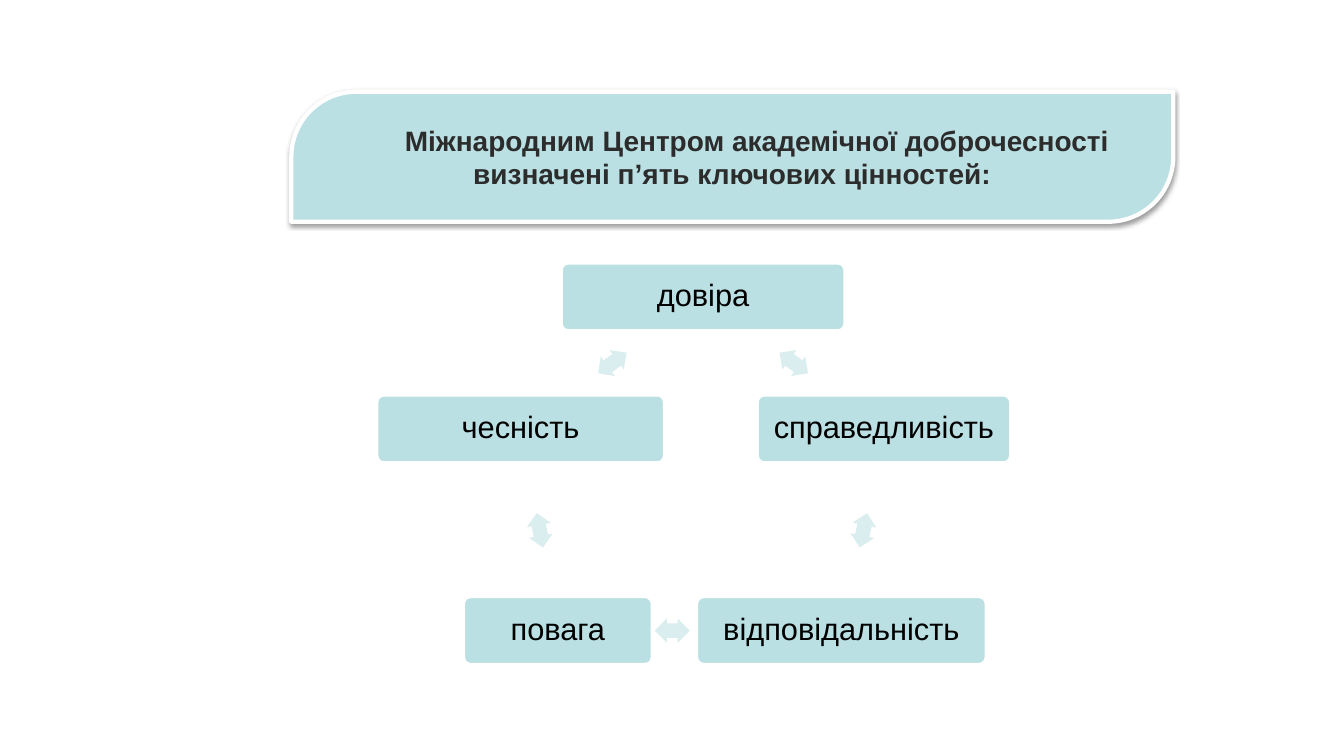
from lxml.etree import SubElement
from pptx import Presentation
from pptx.dml.color import RGBColor
from pptx.enum.shapes import MSO_SHAPE
from pptx.enum.text import MSO_ANCHOR, PP_ALIGN
from pptx.oxml.ns import qn
from pptx.util import Pt

TEAL = RGBColor(0xBB, 0xE0, 0xE3)
PALE_TEAL = RGBColor(0xDA, 0xED, 0xEF)
WHITE = RGBColor(0xFF, 0xFF, 0xFF)
BLACK = RGBColor(0, 0, 0)
CHARCOAL = RGBColor(0x2C, 0x2C, 0x2C)

VALUES = [
    ("довіра", 502.2, 0, 202.3),
    ("справедливість", 631.4, 94.3, 180.7),
    ("відповідальність", 601, 238.3, 206.6),
    ("повага", 398.5, 238.3, 134.6),
    ("чесність", 371.9, 94.3, 205.2),
]
ARROWS = [
    (567, 71.3, 36),
    (616.7, 190.8, 102.1),
    (480.2, 262.4, 180),
    (385.6, 190.8, 259.5),
    (437.4, 71.3, 324),
]


def add_filled(slide, preset, box, fill, adjustments, outline=0):
    """Add a preset shape with a flat fill and an optional white outline."""
    shape = slide.shapes.add_shape(preset, *(Pt(length) for length in box))
    shape.shadow.inherit = False
    for index, value in enumerate(adjustments):
        shape.adjustments[index] = value
    shape.fill.solid()
    shape.fill.fore_color.rgb = fill
    if outline:
        shape.line.color.rgb = WHITE
        shape.line.width = Pt(outline)
    else:
        shape.line.fill.background()
    return shape


def write_text(shape, text, size, color, bold=False, inset=None, spacing=None, indent=0):
    """Write one centred paragraph into a shape."""
    frame = shape.text_frame
    frame.word_wrap = True
    frame.vertical_anchor = MSO_ANCHOR.MIDDLE
    if inset is not None:
        frame.margin_left = frame.margin_right = Pt(inset)
        frame.margin_top = frame.margin_bottom = Pt(inset)
    paragraph = frame.paragraphs[0]
    paragraph.alignment = PP_ALIGN.CENTER
    if spacing:
        paragraph.line_spacing = spacing
    if indent:
        properties = paragraph._p.get_or_add_pPr()
        properties.set("marL", "0")
        properties.set("indent", str(Pt(indent)))
    run = paragraph.add_run()
    run.text = text
    run.font.name = "Arial"
    run.font.size = Pt(size)
    run.font.bold = bold
    run.font.color.rgb = color


def add_shadow(shape, blur, distance, angle, opacity):
    """Give a shape a soft black outer shadow."""
    effects = shape._element.spPr.find(qn("a:effectLst"))
    shadow = SubElement(
        effects, qn("a:outerShdw"), blurRad=str(Pt(blur)), dist=str(Pt(distance)),
        dir=str(angle * 60000), algn="ctr", rotWithShape="0")
    tint = SubElement(shadow, qn("a:srgbClr"), val=str(BLACK))
    SubElement(tint, qn("a:alpha"), val=str(opacity * 1000))


def add_banner(slide, box):
    """Place the heading banner in its box."""
    banner = add_filled(slide, MSO_SHAPE.ROUND_2_DIAG_RECTANGLE, box, TEAL, (0.5, 0), outline=3)
    add_shadow(banner, blur=3.1, distance=1.6, angle=90, opacity=38)
    write_text(
        banner, "Міжнародним Центром академічної доброчесності визначені п’ять ключових цінностей:",
        size=20, color=CHARCOAL, bold=True, indent=35.3)


def add_value_cycle(slide, top, box_height=48.2, arrow_width=25, arrow_height=17.2):
    """Place the ring of five values and the arrows between them."""
    for text, center, offset, width in VALUES:
        box = (center - width / 2, top + offset, width, box_height)
        value = add_filled(slide, MSO_SHAPE.ROUNDED_RECTANGLE, box, TEAL, (0.1,), outline=2)
        write_text(value, text, size=22, color=BLACK, inset=6.5, spacing=0.9)
    for center, offset, angle in ARROWS:
        box = (center - arrow_width / 2, top + offset - arrow_height / 2, arrow_width, arrow_height)
        arrow = add_filled(slide, MSO_SHAPE.LEFT_RIGHT_ARROW, box, PALE_TEAL, (0.6, 0.5))
        arrow.rotation = angle


def main():
    """Build the slide on the key values of academic integrity."""
    deck = Presentation()
    deck.slide_width, deck.slide_height = Pt(960), Pt(540)
    slide = deck.slides.add_slide(deck.slide_layouts[6])
    add_banner(slide, (208.1, 65.5, 630, 92.9))
    add_value_cycle(slide, top=188)
    deck.save("out.pptx")


if __name__ == "__main__":
    main()
